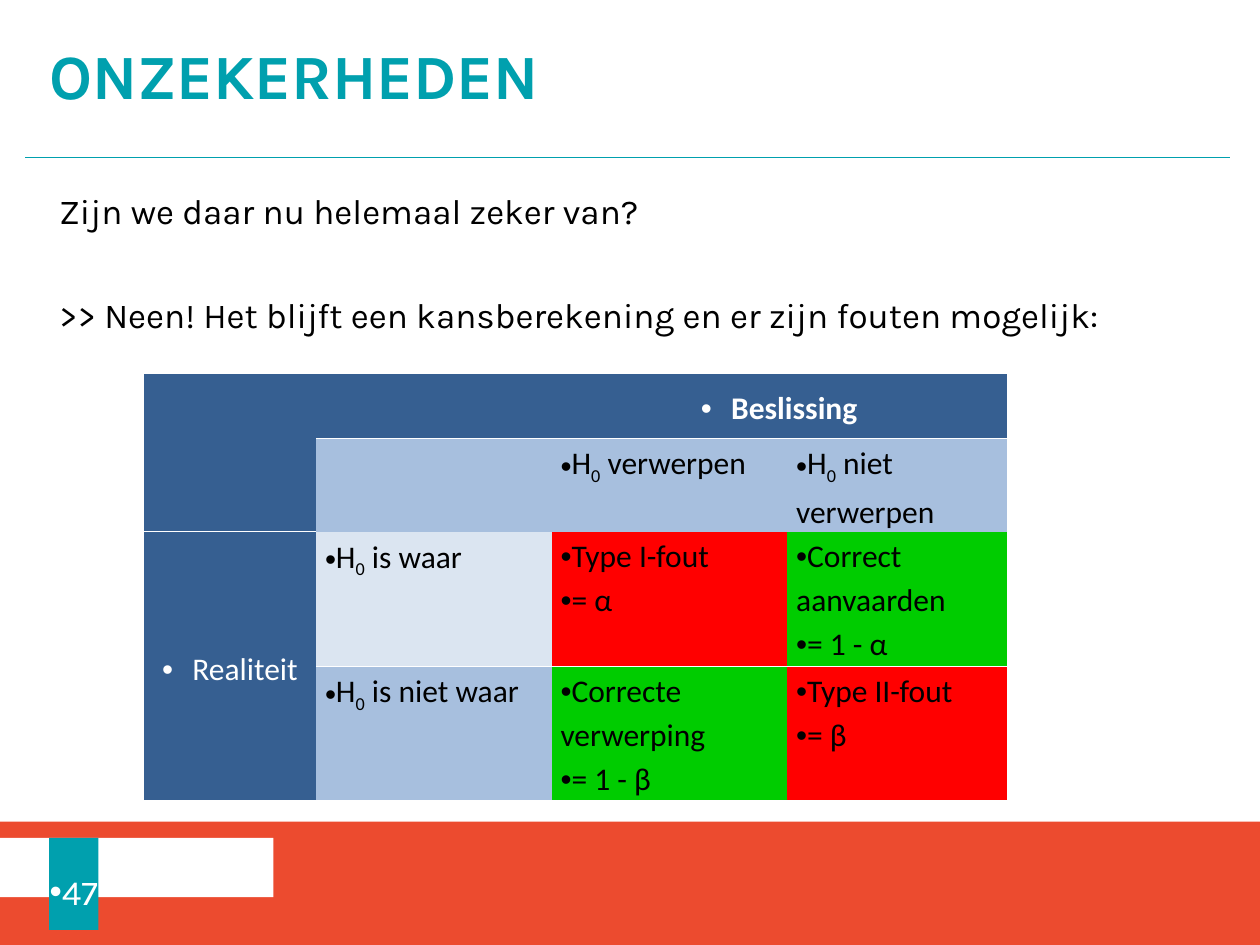
from lxml import etree
from pptx import Presentation
from pptx.dml.color import RGBColor
from pptx.enum.shapes import MSO_CONNECTOR, MSO_SHAPE
from pptx.enum.text import MSO_ANCHOR, PP_ALIGN
from pptx.oxml.ns import qn
from pptx.util import Inches, Pt

RECT = MSO_SHAPE.RECTANGLE
STRAIGHT = MSO_CONNECTOR.STRAIGHT
TOP, MIDDLE = MSO_ANCHOR.TOP, MSO_ANCHOR.MIDDLE
LEFT, CENTER = PP_ALIGN.LEFT, PP_ALIGN.CENTER

TEAL, ORANGE, WHITE, BLACK = "00A0AE", "EC4B2F", "FFFFFF", "000000"
NAVY, BLUE, PALE = "365F91", "A7BFDE", "DBE5F1"
RED, GREEN = "FF0000", "00CC00"


def rgb(value):
    return RGBColor.from_string(value)


def write(p, text, font="Karla", size=20, color=BLACK, bold=False,
          align=LEFT, spacing=1.0, before=0, after=0, bullet=False, hang=0):
    if bullet:
        pPr = p._p.get_or_add_pPr()
        pPr.set("marL", str(Inches(hang)))
        pPr.set("indent", str(-Inches(hang)))
        etree.SubElement(pPr, qn("a:buFont"), typeface="Arial")
        etree.SubElement(pPr, qn("a:buChar"), char="•")
    p.alignment = align
    p.line_spacing = spacing
    p.space_before, p.space_after = Pt(before), Pt(after)
    for i, part in enumerate(text.split("~")):
        r = p.add_run()
        r.text = part
        r.font.name, r.font.size, r.font.bold = font, Pt(size), bold
        r.font.color.rgb = rgb(color)
        if i % 2:
            r._r.get_or_add_rPr().set("baseline", "-25000")


def set_frame(tf, insets, anchor=TOP, wrap=True):
    tf.word_wrap = wrap
    tf.vertical_anchor = anchor
    tf.margin_left, tf.margin_top, tf.margin_right, tf.margin_bottom = map(Inches, insets)


class Deck:
    def __init__(self, width, height):
        self.prs = Presentation()
        self.prs.slide_width, self.prs.slide_height = Inches(width), Inches(height)
        self.s = self.prs.slides.add_slide(self.prs.slide_layouts[6])

    def rect(self, x, y, w, h, fill):
        sp = self.s.shapes.add_shape(RECT, *map(Inches, (x, y, w, h)))
        sp.shadow.inherit = False
        sp.fill.solid()
        sp.fill.fore_color.rgb = rgb(fill)
        sp.line.fill.background()
        return sp

    def line(self, x1, y1, x2, y2, color, width):
        cn = self.s.shapes.add_connector(STRAIGHT, *map(Inches, (x1, y1, x2, y2)))
        cn.line.color.rgb = rgb(color)
        cn.line.width = Pt(width)
        etree.SubElement(cn._element.spPr, qn("a:effectLst"))

    def text(self, x, y, w, h, insets, anchor=TOP):
        tf = self.s.shapes.add_textbox(*map(Inches, (x, y, w, h))).text_frame
        set_frame(tf, insets, anchor)
        return tf

    def table(self, x, y, cols, rows):
        frame = self.s.shapes.add_table(len(rows), len(cols), Inches(x), Inches(y),
                                        Inches(sum(cols)), Inches(sum(rows)))
        table = frame.table
        for column, width in zip(table.columns, cols):
            column.width = Inches(width)
        for row, height in zip(table.rows, rows):
            row.height = Inches(height)
        return table

    def border(self, cell, side, color=None):
        ln = etree.SubElement(cell._tc.get_or_add_tcPr(), qn("a:ln" + side), w=str(Pt(1)))
        if color:
            fill = etree.SubElement(ln, qn("a:solidFill"))
            etree.SubElement(fill, qn("a:srgbClr"), val=color)
        else:
            etree.SubElement(ln, qn("a:noFill"))

    def cell(self, cell, text, fill, above, below, anchor=TOP, **style):
        for side, color in (("L", None), ("R", None), ("T", above), ("B", below)):
            self.border(cell, side, color)
        cell.fill.solid()
        cell.fill.fore_color.rgb = rgb(fill)
        cell.margin_left = cell.margin_right = Inches(0.07)
        cell.margin_top = cell.margin_bottom = 0
        cell.vertical_anchor = anchor
        tf = cell.text_frame
        for i, line in enumerate(text.split("\n") if text else []):
            p = tf.add_paragraph() if i else tf.paragraphs[0]
            write(p, line, font="Calibri", size=18, spacing=1.15, bullet=True, **style)


def add_error_table(deck):
    grid = [
        [("", NAVY), ("", NAVY), ("Beslissing", NAVY), ("", NAVY)],
        [("", NAVY), ("", BLUE), ("H~0~ verwerpen", BLUE), ("H~0~ niet verwerpen", BLUE)],
        [("Realiteit", NAVY), ("H~0~ is waar", PALE), ("Type I-fout\n= α", RED),
         ("Correct aanvaarden\n= 1 - α", GREEN)],
        [("", NAVY), ("H~0~ is niet waar", BLUE), ("Correcte verwerping\n= 1 - β", GREEN),
         ("Type II-fout\n= β", RED)],
    ]
    heading = dict(anchor=MIDDLE, color=WHITE, align=CENTER, hang=0.24)
    styles = {"Beslissing": dict(heading, bold=True), "Realiteit": heading}
    table = deck.table(1.14, 2.96, (1.37, 1.87, 1.87, 1.74), (0.52, 0.74, 1.07, 1.07))
    for r, row in enumerate(grid):
        for c, (text, fill) in enumerate(row):
            above = WHITE if c == 0 or r != 2 else None
            below = WHITE if c == 0 or r != 1 else None
            deck.cell(table.cell(r, c), text, fill, above, below, **styles.get(text, {}))
    for first, last in (((0, 0), (1, 0)), ((0, 2), (0, 3)), ((2, 0), (3, 0))):
        table.cell(*first).merge(table.cell(*last))


def main():
    deck = Deck(10, 7.5)
    deck.rect(0, 6.52, 10, 0.98, ORANGE)
    deck.rect(0, 6.65, 2.17, 0.47, WHITE)
    deck.line(0.2, 1.25, 9.76, 1.25, TEAL, 0.5)

    body = deck.text(0, 1.26, 10, 5.25, (0.47, 0.28, 0.47, 0.16))
    write(body.paragraphs[0], "Zijn we daar nu helemaal zeker van?", spacing=0.9, after=4)
    write(body.add_paragraph(),
          ">> Neen! Het blijft een kansberekening en er zijn fouten mogelijk:",
          spacing=0.9, before=34, after=4)

    title = deck.text(0, 0, 10, 1.25, (0.39, 0.2, 0.39, 0.16), MIDDLE)
    write(title.paragraphs[0], "ONZEKERHEDEN", size=36, color=TEAL, bold=True, spacing=0.8)

    number = deck.rect(0.39, 6.65, 0.39, 0.73, TEAL).text_frame
    set_frame(number, (0, 0.12, 0, 0), MIDDLE, wrap=False)
    write(number.paragraphs[0], "47", color=WHITE, align=CENTER, bullet=True)

    add_error_table(deck)
    deck.prs.save("out.pptx")


if __name__ == "__main__":
    main()
